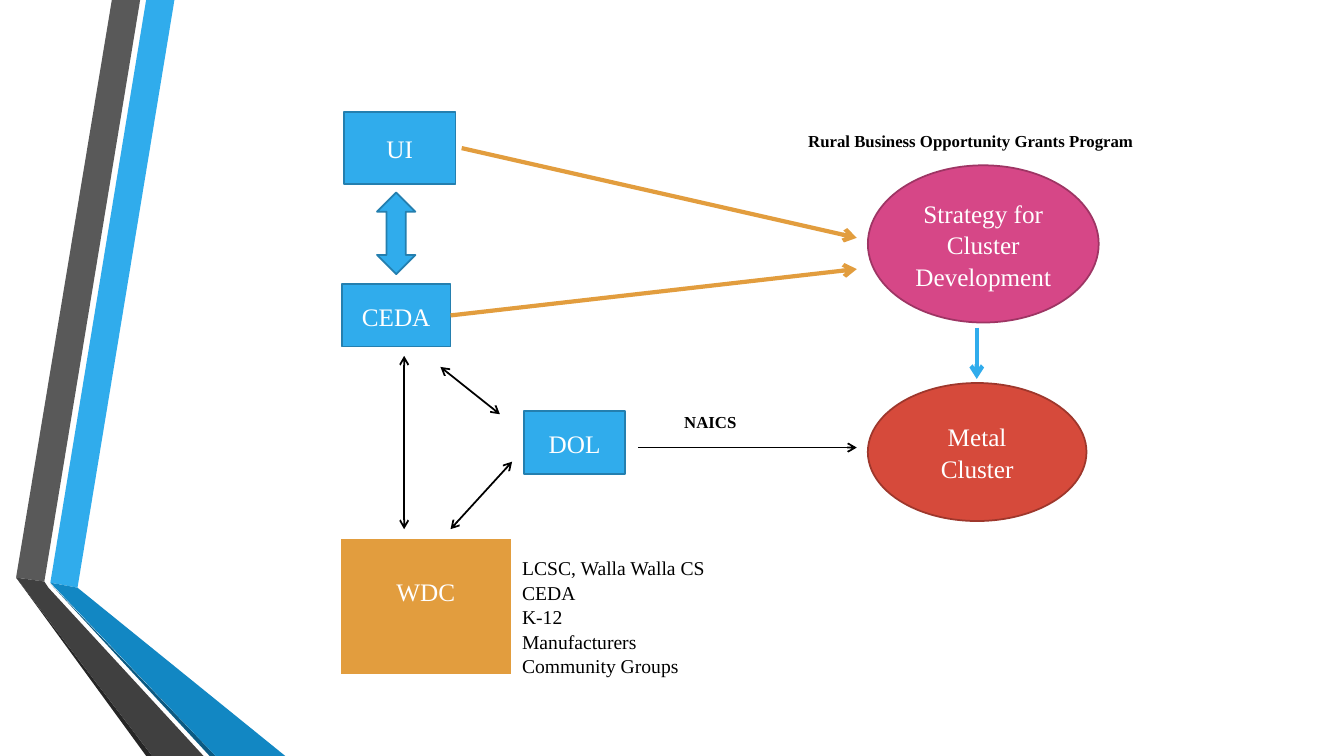
from dataclasses import dataclass
from typing import Optional

from lxml.etree import SubElement
from pptx import Presentation
from pptx.dml.color import RGBColor as RGB
from pptx.enum.shapes import MSO_CONNECTOR as LINE, MSO_SHAPE as SHAPE
from pptx.enum.text import MSO_ANCHOR as ANCHOR, PP_ALIGN as ALIGN
from pptx.oxml.ns import qn
from pptx.util import Pt


@dataclass(frozen=True)
class Theme:
    font: str = "Times New Roman"
    node_size: float = 18
    list_size: float = 14
    label_size: float = 12
    leading: float = 1.04
    thin: float = 1.25
    edge: float = 1.75
    thick: float = 3
    white: str = "FFFFFF"
    black: str = "000000"
    blue: str = "30ACEC"
    blue_edge: str = "247FAF"
    blue_fold: str = "1287C3"
    blue_shade: str = "0C5A82"
    gray: str = "595959"
    gray_fold: str = "404040"
    gray_shade: str = "262626"
    orange: str = "E29D3E"
    red: str = "D64A3B"
    red_edge: str = "9E372C"
    pink: str = "D64787"
    pink_edge: str = "9E3564"


T = Theme()


@dataclass(frozen=True)
class Band:
    fill: str
    points: tuple


@dataclass(frozen=True)
class Node:
    text: str
    box: tuple
    shape: SHAPE = SHAPE.RECTANGLE
    fill: str = T.blue
    edge: str = T.blue_edge
    edge_width: float = T.thin
    bottom_inset: float = 3.6


@dataclass(frozen=True)
class Arrow:
    start: tuple
    end: tuple
    color: str = T.black
    width: float = T.thin
    two_way: bool = False
    source: Optional[str] = None


@dataclass(frozen=True)
class Label:
    lines: tuple
    box: tuple
    size: float = T.label_size
    bold: bool = True


BANDS = (
    Band(T.blue, ((36, 416.2), (55.4, 419.8), (124.6, 0), (104.4, 0))),
    Band(T.gray, ((100.1, 0), (79.9, 0), (11.5, 412.6), (31.7, 415.4))),
    Band(T.gray_shade, ((11.5, 412.6), (104.4, 540), (108.7, 540))),
    Band(T.blue_shade, ((36, 416.9), (149.8, 540), (154.1, 540))),
    Band(T.blue_fold, ((36, 416.2), (154.1, 540), (203.8, 540), (55.4, 419.8))),
    Band(T.gray_fold, ((11.5, 412.6), (108.7, 540), (145.4, 540),
                       (34.6, 419.8), (31.7, 415.4))),
)

NODES = (
    Node("WDC", (242.6, 383.8, 123.1, 98.6), fill=T.orange, edge=T.white,
         edge_width=T.edge, bottom_inset=25),
    Node("Metal Cluster", (619.9, 273.6, 156.2, 98.6), SHAPE.OVAL, T.red, T.red_edge),
    Node("Strategy for Cluster Development", (619.9, 118.1, 164.9, 112.3),
         SHAPE.OVAL, T.pink, T.pink_edge),
    Node("CEDA", (244.1, 203, 77.8, 44.6)),
    Node("DOL", (374.4, 293.8, 72, 44.6)),
    Node("UI", (245.5, 79.9, 79.9, 51.8)),
    Node("", (269.3, 137.5, 27.4, 58.3), SHAPE.UP_DOWN_ARROW),
)

ARROWS = (
    Arrow((288.7, 254.2), (288.7, 378), two_way=True),
    Arrow((365.8, 329.8), (321.8, 378), two_way=True),
    Arrow((455.8, 319.7), (612, 319.7)),
    Arrow((314.6, 262.1), (357.1, 295.9), two_way=True),
    Arrow((321.9, 225.3), (612, 192.2), T.orange, T.thick, source="CEDA"),
    Arrow((329.8, 105.8), (612, 169.9), T.orange, T.thick),
    Arrow((697.7, 234), (697.7, 270.7), T.blue, T.thick),
)

LABELS = (
    Label(("Rural Business Opportunity Grants Program",), (570.2, 89.3, 251.3, 21.6)),
    Label(("NAICS",), (481.7, 290.2, 52.6, 21.6)),
    Label(("LCSC, Walla Walla CS", "CEDA", "K-12", "Manufacturers", "Community Groups"),
          (365.8, 393.1, 149.8, 92.2), T.list_size, False),
)


def write(tf, *lines: str, size: float, color: str, bold: bool = False,
          align: ALIGN = ALIGN.LEFT, anchor: ANCHOR = ANCHOR.TOP) -> None:
    tf.word_wrap = True
    tf.vertical_anchor = anchor
    for i, line in enumerate(lines):
        p = tf.paragraphs[0] if i == 0 else tf.add_paragraph()
        p.alignment = align
        p.line_spacing = T.leading
        r = p.add_run()
        r.text = line
        r.font.name, r.font.size, r.font.bold = T.font, Pt(size), bold
        r.font.color.rgb = RGB.from_string(color)


def paint(sp, fill: str) -> None:
    sp.shadow.inherit = False
    sp.fill.solid()
    sp.fill.fore_color.rgb = RGB.from_string(fill)


def stroke(line, color: str, width: float) -> None:
    line.color.rgb = RGB.from_string(color)
    line.width = Pt(width)


def draw_band(shapes, band: Band) -> None:
    first, *rest = [(Pt(x), Pt(y)) for x, y in band.points]
    builder = shapes.build_freeform(*first)
    builder.add_line_segments(rest, close=True)
    sp = builder.convert_to_shape()
    paint(sp, band.fill)
    sp.line.fill.background()


def draw_node(shapes, node: Node):
    sp = shapes.add_shape(node.shape, *map(Pt, node.box))
    paint(sp, node.fill)
    stroke(sp.line, node.edge, node.edge_width)
    if node.text:
        sp.text_frame.margin_bottom = Pt(node.bottom_inset)
        write(sp.text_frame, node.text, size=T.node_size, color=T.white,
              align=ALIGN.CENTER, anchor=ANCHOR.MIDDLE)
    return sp


def draw_arrow(shapes, arrow: Arrow, nodes: dict) -> None:
    cx = shapes.add_connector(LINE.STRAIGHT, *map(Pt, arrow.start + arrow.end))
    if arrow.source:
        cx.begin_connect(nodes[arrow.source], 3)
    stroke(cx.line, arrow.color, arrow.width)
    ln = cx.line._get_or_add_ln()
    for end in ("a:headEnd", "a:tailEnd") if arrow.two_way else ("a:tailEnd",):
        SubElement(ln, qn(end), type="arrow")
    SubElement(cx._element.spPr, qn("a:effectLst"))


def draw_label(shapes, label: Label) -> None:
    tb = shapes.add_textbox(*map(Pt, label.box))
    write(tb.text_frame, *label.lines, size=label.size, color=T.black, bold=label.bold)


def main() -> None:
    prs = Presentation()
    prs.slide_width, prs.slide_height = Pt(960), Pt(540)
    shapes = prs.slides.add_slide(prs.slide_layouts[6]).shapes
    for band in BANDS:
        draw_band(shapes, band)
    nodes = {node.text: draw_node(shapes, node) for node in NODES}
    for arrow in ARROWS:
        draw_arrow(shapes, arrow, nodes)
    for label in LABELS:
        draw_label(shapes, label)
    prs.save("out.pptx")


if __name__ == "__main__":
    main()
